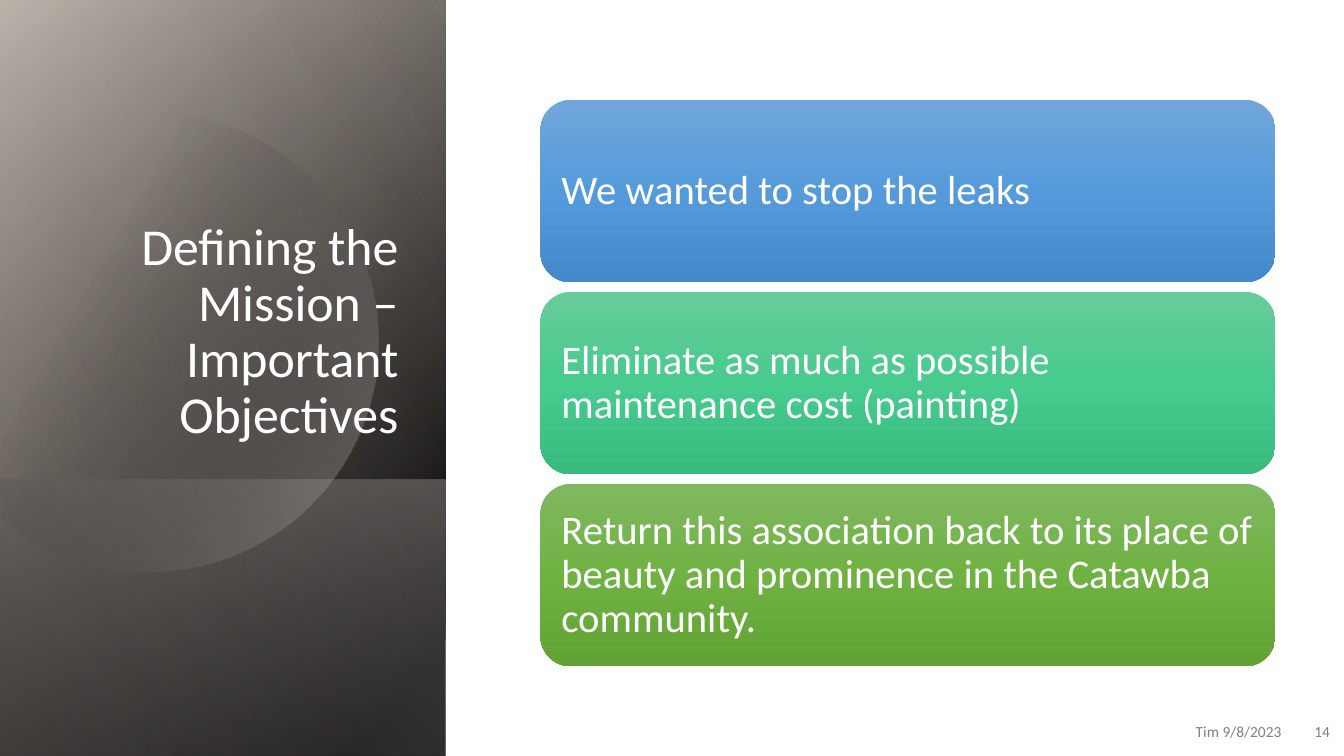
from math import cos, radians, sin

from lxml import etree
from pptx import Presentation
from pptx.dml.color import RGBColor
from pptx.enum.shapes import MSO_SHAPE
from pptx.enum.text import MSO_ANCHOR, PP_ALIGN
from pptx.oxml.ns import qn
from pptx.util import Inches, Pt

COLORS = {
    "white": "FFFFFF", "gray": "808080", "black": "000000",
    "taupe": "AA9D92", "sand": "D8D2CD", "mist": "E8E4E1",
    "blue_top": "71A6DB", "blue_mid": "559BDB", "blue_low": "448ACA",
    "green_top": "67CC9A", "green_mid": "47CB8E", "green_low": "39BB7F",
    "leaf_top": "81B861", "leaf_mid": "6FB242", "leaf_low": "62A336",
}


def paint_gradient(shape, stops, angle):
    """Fill with (position %, color name, opacity %) stops, without line or shadow."""
    shape.shadow.inherit = False
    shape.line.fill.background()
    shape.fill.background()
    empty_fill = shape._element.spPr.find(qn("a:noFill"))
    gradient = etree.Element(qn("a:gradFill"), rotWithShape="1")
    stop_list = etree.SubElement(gradient, qn("a:gsLst"))
    for position, color, opacity in stops:
        stop = etree.SubElement(stop_list, qn("a:gs"), pos=str(position * 1000))
        rgb = etree.SubElement(stop, qn("a:srgbClr"), val=COLORS[color])
        if opacity < 100:
            etree.SubElement(rgb, qn("a:alpha"), val=str(opacity * 1000))
    etree.SubElement(gradient, qn("a:lin"), ang=str(angle * 60000), scaled="0")
    empty_fill.getparent().replace(empty_fill, gradient)


def write_text(shape, text, size, color, align, anchor):
    frame = shape.text_frame
    frame.word_wrap = True
    frame.vertical_anchor = anchor
    frame.text = text
    paragraph = frame.paragraphs[0]
    paragraph.alignment = align
    paragraph.line_spacing = 0.9 if size > 20 else 1.0
    font = paragraph.runs[0].font
    font.name = "Calibri"
    font.size = Pt(size)
    font.color.rgb = RGBColor.from_string(COLORS[color])


prs = Presentation()
prs.slide_width, prs.slide_height = Inches(13.33), Inches(7.5)
slide = prs.slides.add_slide(prs.slide_layouts[6])
shapes = slide.shapes

# Left panel: turned gradient layers with a translucent disc below the last one
FULL = (-1.54, 1.54, 7.5)
panel_layers = [
    (FULL, [(8, "black", 100), (100, "taupe", 100)], 50),
    (FULL, [(0, "black", 0), (99, "sand", 46)], 30),
    ((0.84, 3.92, 2.74), [(2, "sand", 29), (100, "black", 30)], 130),
    (None, [(29, "black", 0), (100, "sand", 43)], 30),
    (FULL, [(0, "black", 0), (99, "mist", 11)], 120),
]
disc_x, disc_y, disc_radius = 1.47, 3.39, 2.28
disc_edge = [
    (Inches(disc_x + disc_radius * cos(radians(angle))),
     Inches(disc_y + disc_radius * sin(radians(angle))))
    for angle in range(-130, 131, 2)
]
for place, stops, angle in panel_layers:
    if place:
        left, top, length = place
        layer = shapes.add_shape(MSO_SHAPE.RECTANGLE, Inches(left), Inches(top),
                                 Inches(length), Inches(4.42))
        layer.rotation = 90
        layer._element.spPr.find(qn("a:xfrm")).set("flipH", "1")
    else:
        outline = shapes.build_freeform(*disc_edge[0])
        outline.add_line_segments(disc_edge[1:], close=True)
        layer = outline.convert_to_shape()
    paint_gradient(layer, stops, angle)

# Title and footer
labels = [
    ("Defining the Mission – Important Objectives", (0.64, 1.84, 3.41, 2.62),
     37, "white", MSO_ANCHOR.BOTTOM),
    ("Tim 9/8/2023", (9.81, 7.06, 3, 0.4), 11, "gray", MSO_ANCHOR.MIDDLE),
    ("14", (12.8, 7.06, 0.49, 0.4), 11, "gray", MSO_ANCHOR.MIDDLE),
]
for text, place, size, color, anchor in labels:
    label = shapes.add_textbox(*map(Inches, place))
    write_text(label, text, size, color, PP_ALIGN.RIGHT, anchor)

# Objectives
objectives = [
    ("We wanted to stop the leaks", "blue"),
    ("Eliminate as much as possible maintenance cost (painting)", "green"),
    ("Return this association back to its place of beauty and prominence "
     "in the Catawba community.", "leaf"),
]
for row, (text, hue) in enumerate(objectives):
    card = shapes.add_shape(MSO_SHAPE.ROUNDED_RECTANGLE, Inches(5.36),
                            Inches(0.99 + row * 1.905), Inches(7.29), Inches(1.81))
    paint_gradient(card, [(0, f"{hue}_top", 100), (50, f"{hue}_mid", 100),
                          (100, f"{hue}_low", 100)], 90)
    write_text(card, text, 29, "white", PP_ALIGN.LEFT, MSO_ANCHOR.MIDDLE)
    card.text_frame.margin_left = card.text_frame.margin_right = Inches(0.12)

prs.save("out.pptx")
